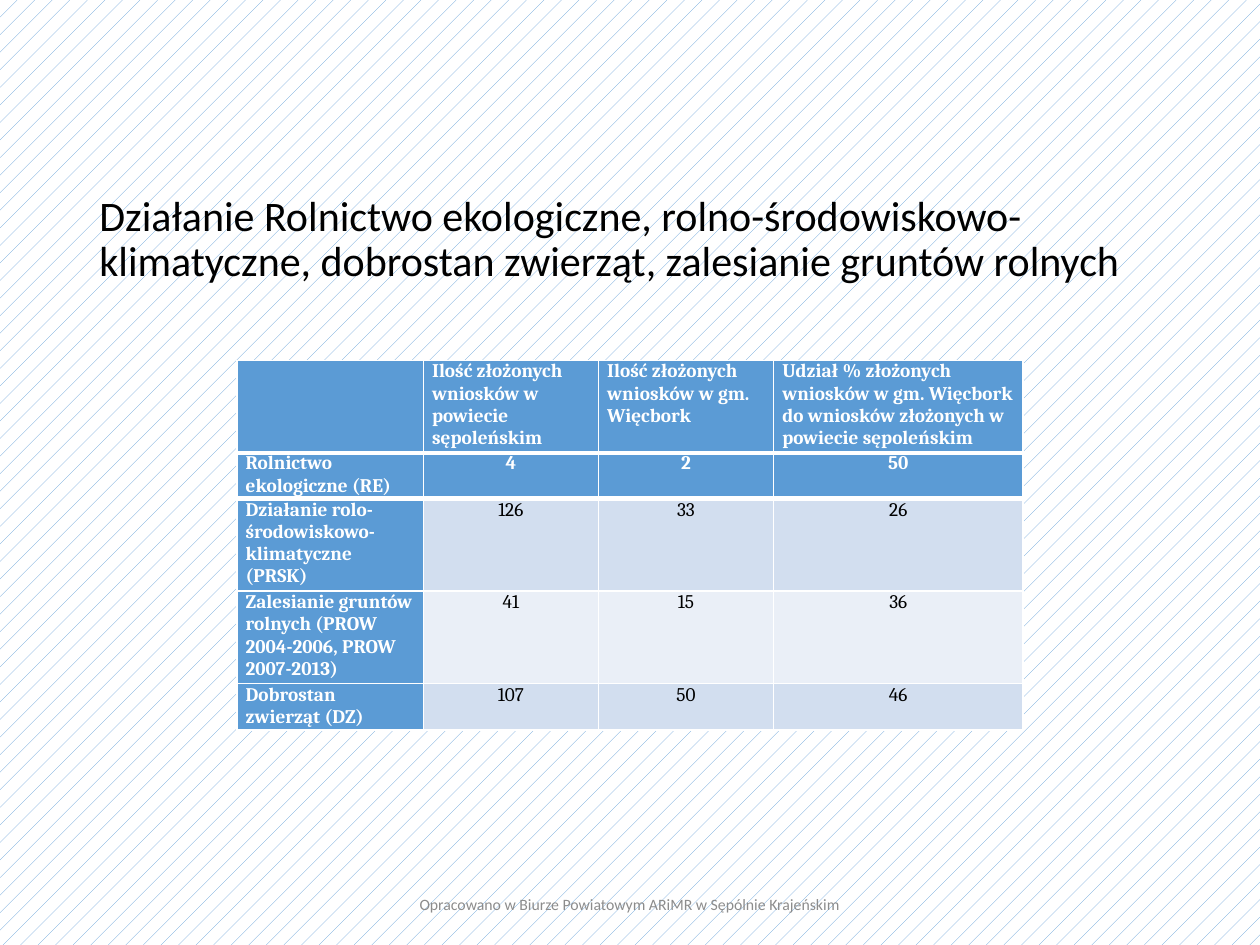
import pptx
import pptx.util
import pptx.dml.color
import pptx.enum.dml
import pptx.enum.text
import pptx.oxml
import pptx.oxml.ns

RGBColor = pptx.dml.color.RGBColor
WHITE = RGBColor(0xFF, 0xFF, 0xFF)
BLACK = RGBColor(0x00, 0x00, 0x00)
GREY = RGBColor(0x8C, 0x8C, 0x8C)
BLUE = RGBColor(0x5B, 0x9B, 0xD5)
BAND_DARK = RGBColor(0xD2, 0xDE, 0xEF)
BAND_LIGHT = RGBColor(0xEA, 0xEF, 0xF7)

LEFT = pptx.enum.text.PP_ALIGN.LEFT
CENTER = pptx.enum.text.PP_ALIGN.CENTER

# Grid of 100 columns by 75 rows over the slide
GRID_COLUMNS, GRID_ROWS = 100, 75
TABLE_COLUMNS = [14.8, 13.9, 13.9, 19.8]

HEADINGS = [
    "",
    "Ilość złożonych wniosków w powiecie sępoleńskim",
    "Ilość złożonych wniosków w gm. Więcbork",
    "Udział % złożonych wniosków w gm. Więcbork do wniosków złożonych w powiecie sępoleńskim",
]
MEASURES = [
    ("Rolnictwo ekologiczne (RE)", "4", "2", "50"),
    ("Działanie rolo-środowiskowo-klimatyczne (PRSK)", "126", "33", "26"),
    ("Zalesianie gruntów rolnych (PROW 2004-2006, PROW 2007-2013)", "41", "15", "36"),
    ("Dobrostan zwierząt (DZ)", "107", "50", "46"),
]


class SlideBuilder:
    body_font = "Calibri"
    table_font = "Cambria"
    table_size = 11

    def __init__(self, deck):
        self.column = deck.slide_width / GRID_COLUMNS
        self.row = deck.slide_height / GRID_ROWS
        self.slide = deck.slides.add_slide(deck.slide_layouts[6])

    def area(self, left, top, width, height):
        return (round(left * self.column), round(top * self.row),
                round(width * self.column), round(height * self.row))

    def background(self, front, back):
        fill = self.slide.background.fill
        fill.patterned()
        fill.pattern = pptx.enum.dml.MSO_PATTERN.PERCENT_5
        fill.fore_color.rgb = front
        fill.back_color.rgb = back

    def add_span(self, para, text, font, size, color, align=LEFT, bold=False):
        para.alignment = align
        span = para.add_run()
        span.text = text
        span.font.name = font
        span.font.size = pptx.util.Pt(size)
        span.font.color.rgb = color
        span.font.bold = bold

    def text(self, area, text, size, color, align=LEFT, spacing=1.0):
        frame = self.slide.shapes.add_textbox(*self.area(*area)).text_frame
        frame.word_wrap = True
        frame.vertical_anchor = pptx.enum.text.MSO_ANCHOR.MIDDLE
        para = frame.paragraphs[0]
        para.line_spacing = spacing
        self.add_span(para, text, self.body_font, size, color, align)

    def borders(self, cell, bottom):
        properties = cell._tc.get_or_add_tcPr()
        namespace = pptx.oxml.ns.nsdecls("a")
        sides = [("lnL", 1), ("lnR", 1), ("lnT", 1), ("lnB", bottom)]
        for place, (side, width) in enumerate(sides):
            properties.insert(place, pptx.oxml.parse_xml(
                f'<a:{side} {namespace} w="{pptx.util.Pt(width)}"><a:solidFill>'
                f'<a:srgbClr val="{WHITE}"/></a:solidFill></a:{side}>'))

    def cell(self, cell, text, fill, color, align, bold, bottom):
        cell.margin_left = cell.margin_right = round(0.7 * self.column)
        cell.margin_top = cell.margin_bottom = 0
        cell.fill.solid()
        cell.fill.fore_color.rgb = fill
        self.borders(cell, bottom)
        if text:
            self.add_span(cell.text_frame.paragraphs[0], text, self.table_font,
                          self.table_size, color, align, bold)

    def table(self, left, top, heights, records, bands, number_align):
        """A band of BLUE marks a heading row; other rows hold plain values."""
        area = self.area(left, top, sum(TABLE_COLUMNS), sum(heights))
        table = self.slide.shapes.add_table(
            len(records), len(TABLE_COLUMNS), *area).table
        for column, width in zip(table.columns, TABLE_COLUMNS):
            column.width = round(width * self.column)
        for row, height, record, band in zip(table.rows, heights, records, bands):
            row.height = round(height * self.row)
            for index, (cell, text) in enumerate(zip(row.cells, record)):
                heading = index == 0 or band == BLUE
                self.cell(cell, text,
                          fill=BLUE if heading else band,
                          color=WHITE if heading else BLACK,
                          align=LEFT if index == 0 else number_align,
                          bold=heading,
                          bottom=3 if band == BLUE else 1)


def main():
    deck = pptx.Presentation()
    deck.slide_width = pptx.util.Inches(10)
    deck.slide_height = pptx.util.Inches(7.5)
    page = SlideBuilder(deck)
    page.background(BLUE, WHITE)

    # Title and footer
    page.text((6.9, 13.6, 86.2, 11),
              "Działanie Rolnictwo ekologiczne, rolno-środowiskowo-klimatyczne, "
              "dobrostan zwierząt, zalesianie gruntów rolnych",
              24, BLACK, spacing=0.9)
    page.text((30.1, 69.8, 39.7, 4),
              "Opracowano w Biurze Powiatowym ARiMR w Sępólnie Krajeńskim",
              9, GREY, CENTER)

    # Values, then the headings above them
    page.table(18.8, 35.9, [3.6, 5.4, 7.2, 3.6], MEASURES,
               [BLUE, BAND_DARK, BAND_LIGHT, BAND_DARK], CENTER)
    page.table(18.8, 28.6, [7.2], [HEADINGS], [BLUE], LEFT)

    deck.save("out.pptx")


if __name__ == "__main__":
    main()
